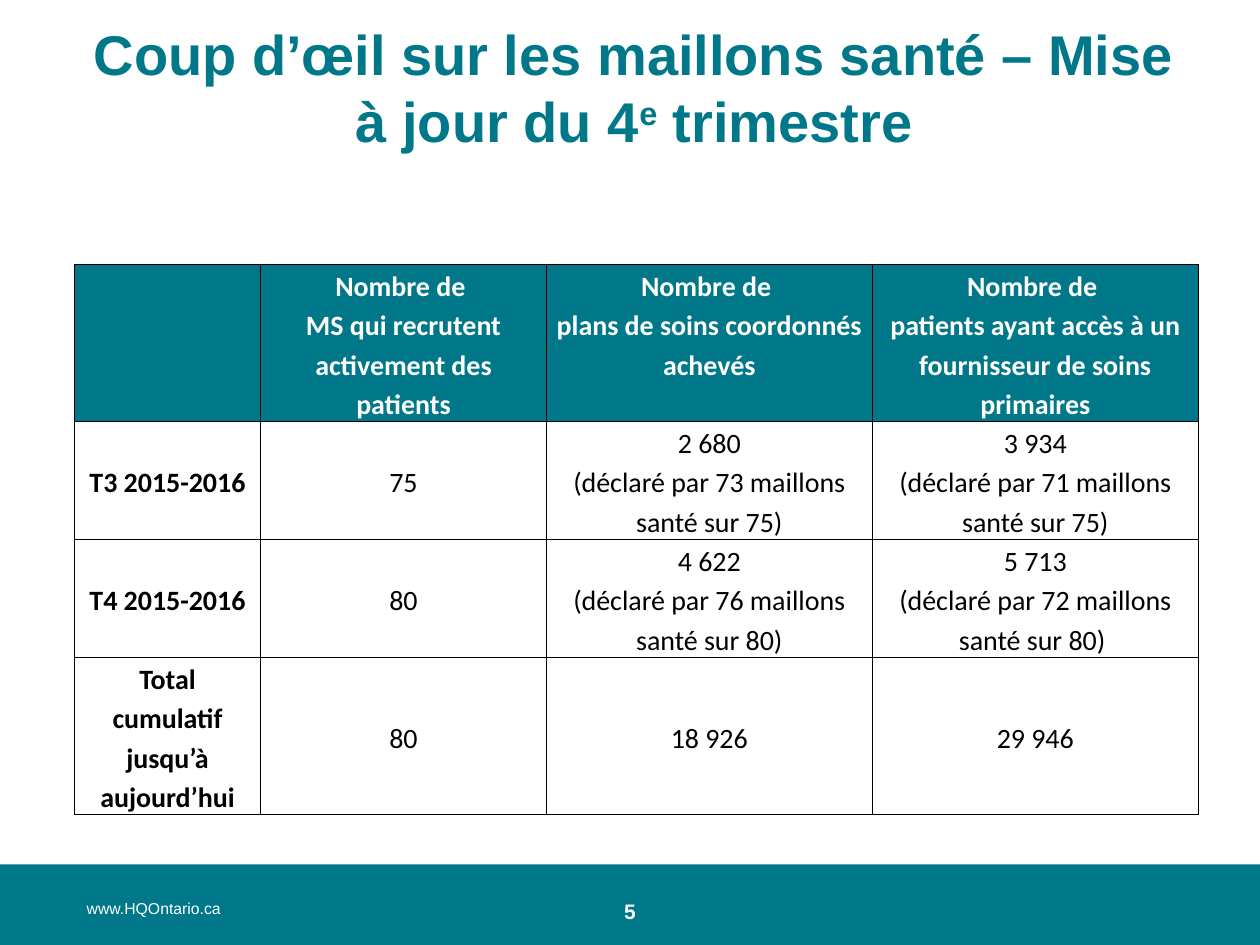
from lxml.etree import SubElement
from pptx import Presentation
from pptx.dml.color import RGBColor
from pptx.enum.shapes import MSO_SHAPE
from pptx.enum.text import MSO_ANCHOR, PP_ALIGN
from pptx.oxml.ns import qn
from pptx.util import Pt

TEAL, WHITE, BLACK = "00788A", "FFFFFF", "000000"


def rgb(color):
    return RGBColor.from_string(color)


def add_run(p, text, color, **font):
    r = p.add_run()
    r.text = text
    r.font.color.rgb = rgb(color)
    for name, value in font.items():
        setattr(r.font, name, value)
    return r


prs = Presentation()
prs.slide_width, prs.slide_height = Pt(720), Pt(540)
s = prs.slides.add_slide(prs.slide_layouts[6])

# Footer band
band = s.shapes.add_shape(MSO_SHAPE.RECTANGLE, Pt(0), Pt(494), Pt(723), Pt(48))
band.shadow.inherit = False
band.fill.solid()
band.fill.fore_color.rgb = rgb(TEAL)
band.line.fill.background()

# Title, page number and web address
title_font = {"size": Pt(32), "name": "Arial", "bold": True}
number_font = {"size": Pt(12), "name": "Arial", "bold": True}
address_font = {"size": Pt(9), "name": "Arial", "bold": False}
texts = [
    ((36, 21.6, 653, 55.4), PP_ALIGN.CENTER, MSO_ANCHOR.MIDDLE, TEAL, title_font,
     [("Coup d’œil sur les maillons santé – Mise à jour du 4", 0), ("e", 30000), (" trimestre", 0)]),
    ((318, 510, 84, 21.6), PP_ALIGN.CENTER, MSO_ANCHOR.TOP, WHITE, number_font, [("5", 0)]),
    ((42.5, 510, 222, 19.4), PP_ALIGN.LEFT, MSO_ANCHOR.TOP, WHITE, address_font,
     [("www.HQOntario.ca", 0)]),
]
for box, align, anchor, color, font, runs in texts:
    tf = s.shapes.add_textbox(*map(Pt, box)).text_frame
    tf.word_wrap = True
    tf.vertical_anchor = anchor
    p = tf.paragraphs[0]
    p.alignment = align
    for text, baseline in runs:
        r = add_run(p, text, color, **font)
        if baseline:
            r.font._element.set("baseline", str(baseline))

# Table of results by quarter; each cell is a list of paragraphs
rows = [
    [[],
     ["Nombre de ", "MS qui recrutent activement des patients"],
     ["Nombre de ", "plans de soins coordonnés achevés"],
     ["Nombre de ", "patients ayant accès à un", "fournisseur de soins primaires"]],
    [["T3 2015-2016"], ["75"],
     ["2 680", "(déclaré par 73 maillons santé sur 75)"],
     ["3 934", "(déclaré par 71 maillons santé sur 75)"]],
    [["T4 2015-2016"], ["80"],
     ["4 622", "(déclaré par 76 maillons santé sur 80)"],
     ["5 713", "(déclaré par 72 maillons santé sur 80) "]],
    [["Total cumulatif jusqu’à aujourd’hui"], ["80"], ["18 926"], ["29 946"]],
]
widths = [106.5, 163.2, 186.3, 186.3]
heights = [89.8, 67.4, 67.4, 89.8]
cell_format = {"margin_left": Pt(5), "margin_right": Pt(5), "margin_top": 0, "margin_bottom": 0}

table = s.shapes.add_table(len(rows), len(widths), Pt(42.5), Pt(151.2),
                           Pt(sum(widths)), Pt(sum(heights))).table
for column, width in zip(table.columns, widths):
    column.width = Pt(width)
for row, height in zip(table.rows, heights):
    row.height = Pt(height)

for i, row in enumerate(rows):
    header = i == 0
    for j, paragraphs in enumerate(row):
        cell = table.cell(i, j)
        for name, value in cell_format.items():
            setattr(cell, name, value)
        cell.vertical_anchor = MSO_ANCHOR.TOP if header else MSO_ANCHOR.MIDDLE
        for side in ("a:lnL", "a:lnR", "a:lnT", "a:lnB"):
            ln = SubElement(cell._tc.get_or_add_tcPr(), qn(side), w=str(Pt(1)))
            SubElement(SubElement(ln, qn("a:solidFill")), qn("a:srgbClr"), val=BLACK)
        if header:
            cell.fill.solid()
            cell.fill.fore_color.rgb = rgb(TEAL)
        else:
            cell.fill.background()
        tf = cell.text_frame
        for k, text in enumerate(paragraphs):
            p = tf.add_paragraph() if k else tf.paragraphs[0]
            p.alignment = PP_ALIGN.CENTER
            p.line_spacing = 1.15
            add_run(p, text, WHITE if header else BLACK,
                    size=Pt(16), name="Calibri", bold=header or j == 0)

prs.save("out.pptx")
